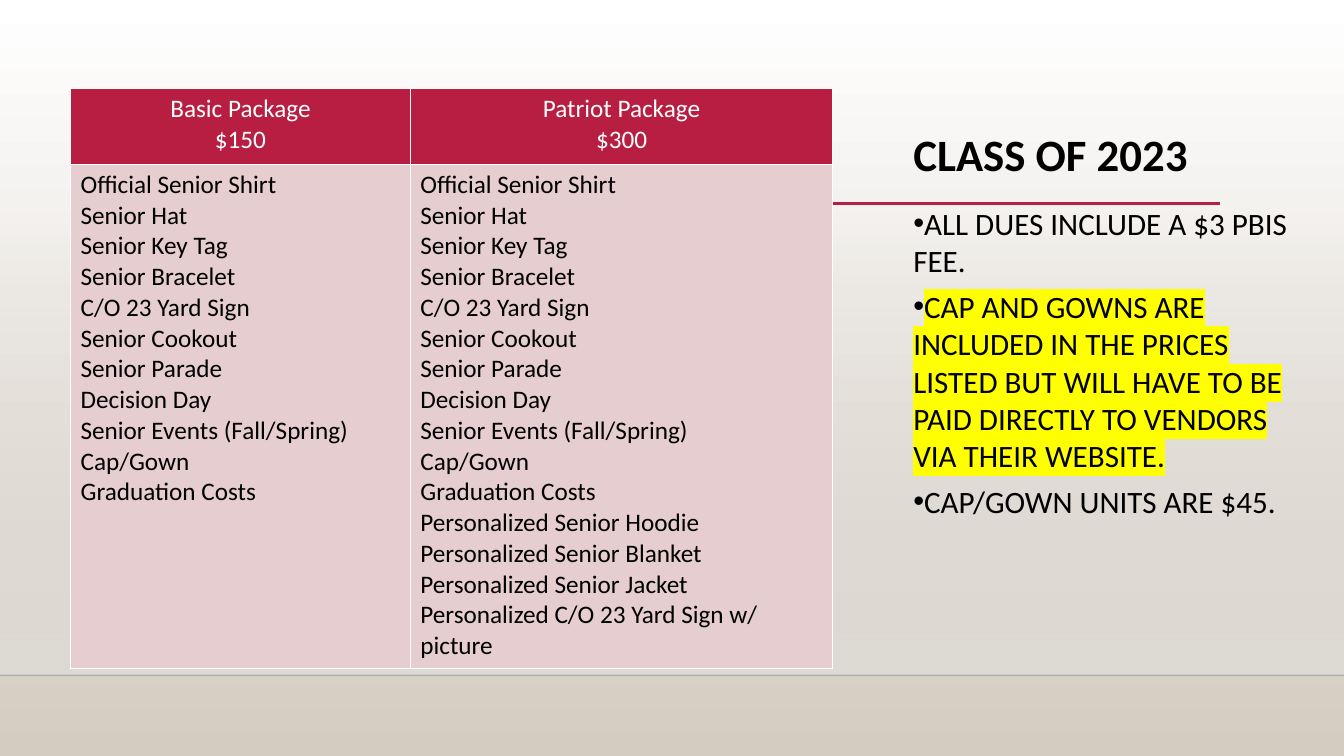
import pptx
import pptx.util
import pptx.dml.color
import pptx.enum.shapes
import pptx.enum.text
import pptx.oxml
import pptx.oxml.ns
from pptx.util import Inches

# Content
TITLE = "CLASS OF 2023"
NOTES = [
    ("ALL DUES INCLUDE A $3 PBIS FEE.", None),
    ("CAP AND GOWNS ARE INCLUDED IN THE PRICES LISTED BUT WILL HAVE TO BE "
     "PAID DIRECTLY TO VENDORS VIA THEIR WEBSITE.", "FFFF00"),
    ("CAP/GOWN UNITS ARE $45.", None),
]
BASIC_ITEMS = [
    "Official Senior Shirt", "Senior Hat", "Senior Key Tag", "Senior Bracelet",
    "C/O 23 Yard Sign", "Senior Cookout", "Senior Parade", "Decision Day",
    "Senior Events (Fall/Spring)", "Cap/Gown", "Graduation Costs",
]
PATRIOT_EXTRAS = [
    "Personalized Senior Hoodie", "Personalized Senior Blanket",
    "Personalized Senior Jacket", "Personalized C/O 23 Yard Sign w/ picture",
]
PACKAGES = [
    (["Basic Package", "$150"], BASIC_ITEMS),
    (["Patriot Package", "$300"], BASIC_ITEMS + PATRIOT_EXTRAS),
]
COLUMN_WIDTHS = [3.37, 4.19]
ROW_HEIGHTS = [0.75, 5]
CRIMSON, PINK, WHITE, BLACK = "B71E42", "E6CDCF", "FFFFFF", "000000"
SAND, STONE = "D4CCC0", "DFDBD5"
FLOOR = 6.7


def color(value):
    return pptx.dml.color.RGBColor.from_string(value)


def element(xml):
    """Parse a DrawingML fragment whose root is an a: element."""
    name, rest = xml[1:].split(" ", 1)
    return pptx.oxml.parse_xml(f"<{name} {pptx.oxml.ns.nsdecls('a')} {rest}")


def set_alpha(properties, percent):
    """Set the opacity of the first colour found."""
    first = properties.find(".//" + pptx.oxml.ns.qn("a:srgbClr"))
    first.append(element(f'<a:alpha val="{percent * 1000}"/>'))


def set_gradient(fill, top, bottom):
    fill.gradient()
    fill.gradient_angle = 270
    for stop, value in zip(fill.gradient_stops, (top, bottom)):
        stop.color.rgb = color(value)


def add_text(frame, text, size=18, ink=BLACK, bold=False, align=None,
             bullet=False, highlight=None, after=None, spacing=None):
    """Write one paragraph, using the empty first one when it is free."""
    paragraph = frame.paragraphs[0]
    if paragraph.runs:
        paragraph = frame.add_paragraph()
    if bullet:
        properties = paragraph._p.get_or_add_pPr()
        properties.set("marL", "0")
        properties.set("indent", str(-Inches(0.25)))
        properties.append(element(f'<a:buClr ><a:srgbClr val="{ink}"/></a:buClr>'))
        properties.append(element('<a:buFont typeface="Arial"/>'))
        properties.append(element('<a:buChar char="•"/>'))
    paragraph.alignment = align
    if after is not None:
        paragraph.space_after = pptx.util.Pt(after)
    if spacing is not None:
        paragraph.line_spacing = spacing
    run = paragraph.add_run()
    run.text = text
    run.font.size = pptx.util.Pt(size)
    run.font.bold = bold
    run.font.color.rgb = color(ink)
    run.font.name = "Calibri"
    if highlight:
        ink_fill = run._r.rPr.find(pptx.oxml.ns.qn("a:solidFill"))
        ink_fill.addnext(element(
            f'<a:highlight ><a:srgbClr val="{highlight}"/></a:highlight>'))


def add_line(slide, left, right, y, ink, width, opacity=100):
    line = slide.shapes.add_connector(
        pptx.enum.shapes.MSO_CONNECTOR.STRAIGHT,
        Inches(left), Inches(y), Inches(right), Inches(y))
    line.line.color.rgb = color(ink)
    line.line.width = pptx.util.Pt(width)
    line._element.spPr.append(element("<a:effectLst />"))
    if opacity < 100:
        set_alpha(line._element.spPr, opacity)


def fill_cell(cell, lines, fill, ink, align=None):
    cell.fill.solid()
    cell.fill.fore_color.rgb = color(fill)
    for text in lines:
        add_text(cell.text_frame, text, ink=ink, align=align)
    properties = cell._tc.get_or_add_tcPr()
    for position, side in enumerate(("lnL", "lnR", "lnT", "lnB")):
        properties.insert(position, element(
            f'<a:{side} w="12700"><a:solidFill><a:srgbClr val="{WHITE}"/>'
            f'</a:solidFill></a:{side}>'))


def main():
    presentation = pptx.Presentation()
    presentation.slide_width = Inches(13.33)
    presentation.slide_height = Inches(7.5)
    slide = presentation.slides.add_slide(presentation.slide_layouts[5])

    # Backdrop: wall, floor edge and title rule
    set_gradient(slide.background.fill, WHITE, SAND)
    wall = slide.shapes.add_shape(
        pptx.enum.shapes.MSO_SHAPE.RECTANGLE,
        0, Inches(2.21), Inches(13.33), Inches(FLOOR - 2.21))
    wall.shadow.inherit = False
    wall.line.fill.background()
    set_gradient(wall.fill, STONE, STONE)
    set_alpha(wall._element.spPr, 0)
    add_line(slide, 0, 13.33, FLOOR, BLACK, 1, opacity=20)
    add_line(slide, 1.59, 12.1, 2.02, CRIMSON, 2.5)

    # Notes on the right
    notes = slide.shapes.add_textbox(
        Inches(8.96), Inches(1.98), Inches(4.01), Inches(4.24))
    notes.text_frame.word_wrap = True
    for text, highlight in NOTES:
        add_text(notes.text_frame, text, size=22.2, bullet=True,
                 highlight=highlight, after=6)

    # Title
    title = slide.shapes.title
    title.left, title.top = Inches(8.96), Inches(0.7)
    title.width, title.height = Inches(3.67), Inches(1.72)
    title.text_frame.word_wrap = True
    title.text_frame.vertical_anchor = pptx.enum.text.MSO_ANCHOR.MIDDLE
    add_text(title.text_frame, TITLE, size=32, bold=True, spacing=0.9,
             align=pptx.enum.text.PP_ALIGN.LEFT)

    # Package table
    table = slide.shapes.add_table(
        len(ROW_HEIGHTS), len(PACKAGES), Inches(0.7), Inches(0.88),
        Inches(sum(COLUMN_WIDTHS)), Inches(sum(ROW_HEIGHTS))).table
    for row, height in zip(table.rows, ROW_HEIGHTS):
        row.height = Inches(height)
    for index, (heading, items) in enumerate(PACKAGES):
        table.columns[index].width = Inches(COLUMN_WIDTHS[index])
        fill_cell(table.cell(0, index), heading, CRIMSON, WHITE,
                  align=pptx.enum.text.PP_ALIGN.CENTER)
        fill_cell(table.cell(1, index), items, PINK, BLACK)

    presentation.save("out.pptx")


if __name__ == "__main__":
    main()
